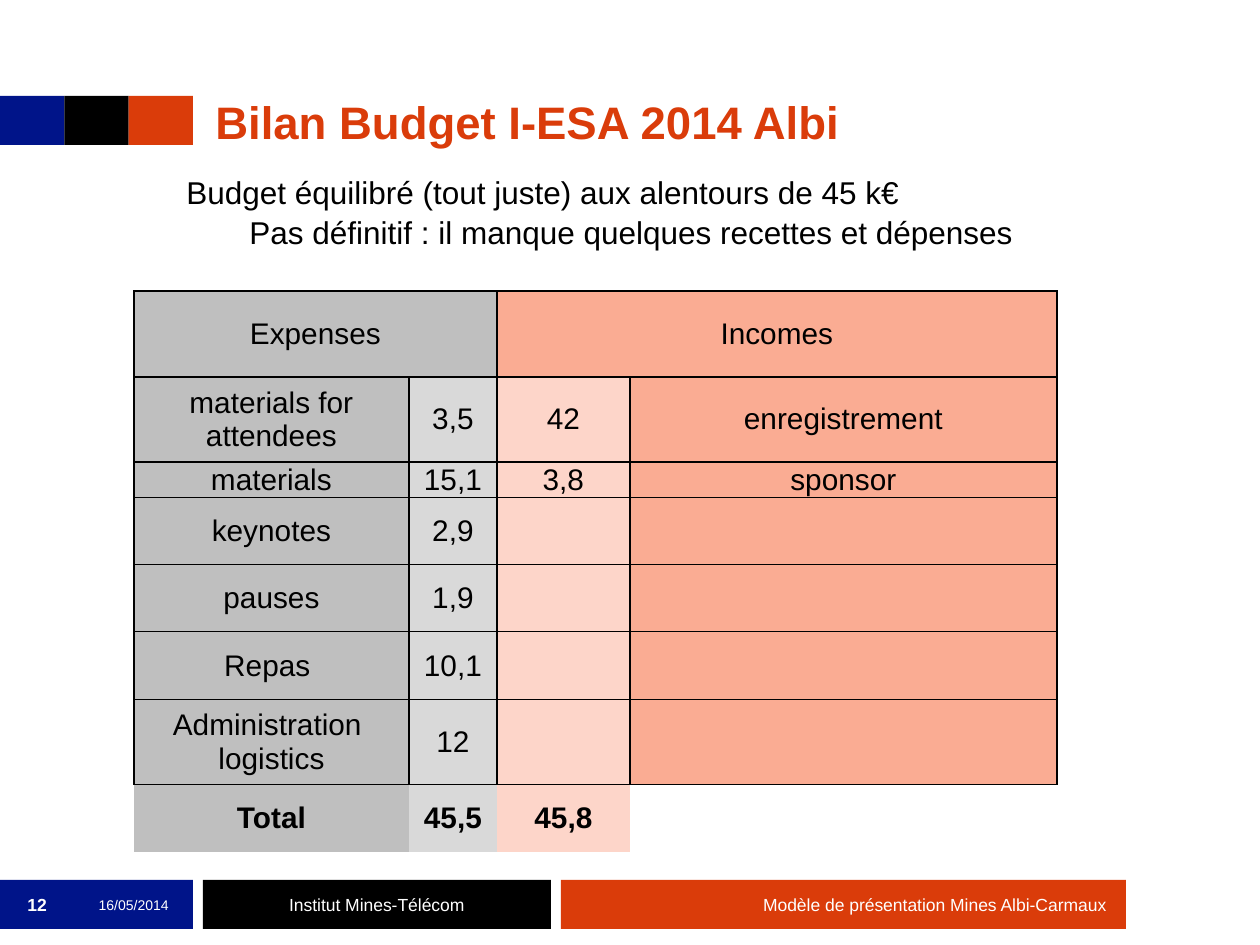
from pptx import Presentation
from pptx.dml.color import RGBColor
from pptx.enum.shapes import MSO_SHAPE
from pptx.enum.text import MSO_ANCHOR, PP_ALIGN
from pptx.oxml.ns import qn
from pptx.util import Emu, Pt
from lxml.etree import SubElement

BLUE = RGBColor(0x00, 0x14, 0x89)
ORANGE = RGBColor(0xDA, 0x3C, 0x0A)
BLACK = RGBColor(0x00, 0x00, 0x00)
WHITE = RGBColor(0xFF, 0xFF, 0xFF)
GREY = RGBColor(0xBF, 0xBF, 0xBF)
LIGHT_GREY = RGBColor(0xD9, 0xD9, 0xD9)
SALMON = RGBColor(0xFA, 0xAC, 0x93)
LIGHT_SALMON = RGBColor(0xFD, 0xD5, 0xC9)

COLUMN_FILLS = [GREY, LIGHT_GREY, LIGHT_SALMON, SALMON]
COLUMNS = [275, 88, 133, 427]
ROWS = [86, 85, 34, 67, 67, 68, 85, 67]
BUDGET = [
    ["Expenses", "", "Incomes", ""],
    ["materials for attendees", "3,5", "42", "enregistrement"],
    ["materials", "15,1", "3,8", "sponsor"],
    ["keynotes", "2,9", "", ""],
    ["pauses", "1,9", "", ""],
    ["Repas ", "10,1", "", ""],
    ["Administration \vlogistics", "12", "", ""],
    ["Total", "45,5", "45,8", ""],
]


def px(n):
    return Emu(round(n * 914400 / 126))


class Deck:
    """Holds the slide style and draws each kind of element on the current slide."""

    font = "Arial"

    def __init__(self, width, height):
        self.prs = Presentation()
        self.prs.slide_width, self.prs.slide_height = px(width), px(height)
        self.s = self.prs.slides.add_slide(self.prs.slide_layouts[6])

    def style(self, p, size, color, bold=False, align=PP_ALIGN.LEFT):
        p.alignment = align
        p.font.name, p.font.size, p.font.bold = self.font, Pt(size), bold
        p.font.color.rgb = color

    def rect(self, x, y, w, h, color):
        sp = self.s.shapes.add_shape(MSO_SHAPE.RECTANGLE, px(x), px(y), px(w), px(h))
        sp.shadow.inherit = False
        sp.fill.solid()
        sp.fill.fore_color.rgb = color
        sp.line.fill.background()

    def text(self, x, y, w, h, lines, size, color, bold=False,
             align=PP_ALIGN.LEFT, anchor=MSO_ANCHOR.MIDDLE, indent=0, spacing=1.0, right=13):
        tf = self.s.shapes.add_textbox(px(x), px(y), px(w), px(h)).text_frame
        tf.word_wrap, tf.vertical_anchor, tf.margin_right = True, anchor, px(right)
        for i, line in enumerate(lines):
            p = tf.add_paragraph() if i else tf.paragraphs[0]
            p.text, p.level, p.line_spacing = line, i, spacing
            p._p.get_or_add_pPr().set("marL", str(px(indent * i)))
            self.style(p, size, color, bold, align)

    def border(self, cell, sides):
        tcPr = cell._tc.get_or_add_tcPr()
        for side in "LRTB":
            ln = SubElement(tcPr, qn(f"a:ln{side}"), w=str(Pt(1)))
            if side in sides:
                fill = SubElement(ln, qn("a:solidFill"))
                SubElement(fill, qn("a:srgbClr"), val=str(BLACK))
            else:
                SubElement(ln, qn("a:noFill"))

    def cell(self, cell, text, size, fill, bold, sides):
        cell.margin_left = cell.margin_right = cell.margin_top = cell.margin_bottom = 0
        cell.vertical_anchor = MSO_ANCHOR.MIDDLE
        p = cell.text_frame.paragraphs[0]
        p.text = text
        self.style(p, size, BLACK, bold, PP_ALIGN.CENTER)
        self.border(cell, sides)
        if fill is None:
            cell.fill.background()
        else:
            cell.fill.solid()
            cell.fill.fore_color.rgb = fill

    def table(self, x, y, columns, rows, data, size):
        table = self.s.shapes.add_table(len(rows), len(columns), px(x), px(y),
                                        px(sum(columns)), px(sum(rows))).table
        table.first_row = table.horz_banding = False
        for column, width in zip(table.columns, columns):
            column.width = px(width)
        last = len(rows) - 1
        for i, (height, texts) in enumerate(zip(rows, data)):
            table.rows[i].height = px(height)
            for j, text in enumerate(texts):
                fill = COLUMN_FILLS[j]
                if i == 0:
                    fill = GREY if j < 2 else SALMON
                elif i == last and not text:
                    fill = None
                self.cell(table.cell(i, j), text, size, fill, i == last,
                          "T" if i == last else "LRTB")
        for j in (0, 2):
            table.cell(0, j).merge(table.cell(0, j + 1))


def main():
    deck = Deck(1260, 945)
    for i, color in enumerate([BLUE, BLACK, ORANGE]):
        deck.rect(64.33 * i, 96, 64.33, 49, color)
    for x, w, color in [(0, 193, BLUE), (203, 348, BLACK), (561, 565, ORANGE)]:
        deck.rect(x, 880, w, 49, color)

    deck.text(203, 0, 994, 155, ["Bilan Budget I-ESA 2014 Albi"], 26, ORANGE,
              bold=True, anchor=MSO_ANCHOR.BOTTOM)
    deck.text(174, 165, 912, 89,
              ["Budget équilibré (tout juste) aux alentours de 45 k€",
               "Pas définitif : il manque quelques recettes et dépenses"],
              18, BLACK, anchor=MSO_ANCHOR.TOP, indent=63, spacing=1.06)
    deck.table(134, 291, COLUMNS, ROWS, BUDGET, 17)

    center = PP_ALIGN.CENTER
    deck.text(1, 880, 73, 49, ["12"], 10, WHITE, bold=True, align=center)
    deck.text(74, 880, 120, 49, ["16/05/2014"], 8, WHITE, align=center)
    deck.text(203, 880, 348, 49, ["Institut Mines-Télécom"], 10, WHITE, align=center)
    deck.text(561, 880, 565, 49, ["Modèle de présentation Mines Albi-Carmaux"], 10, WHITE,
              align=PP_ALIGN.RIGHT, right=20)
    deck.prs.save("out.pptx")


if __name__ == "__main__":
    main()
